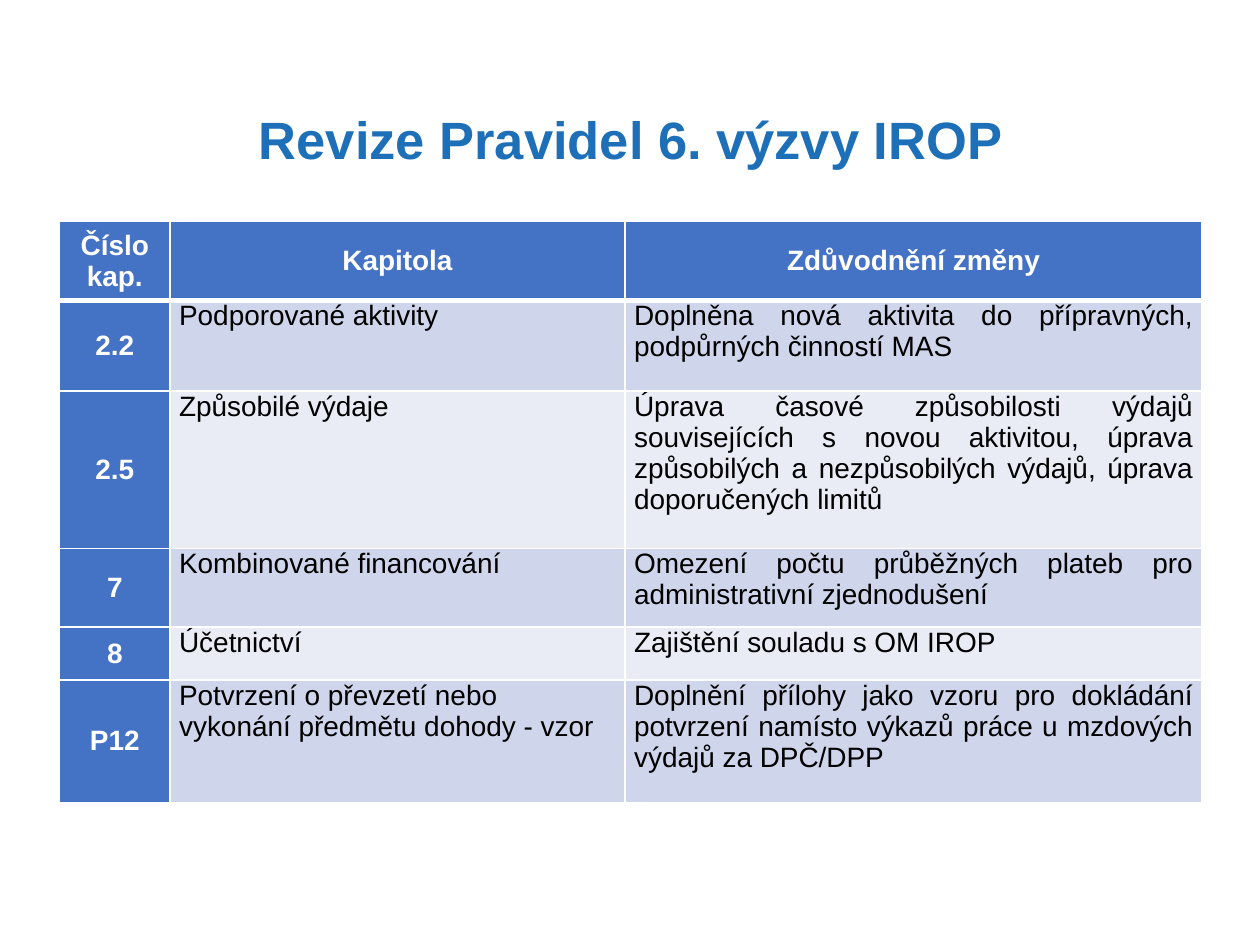
from pptx import Presentation
from pptx.dml.color import RGBColor
from pptx.enum.text import MSO_ANCHOR as Anchor, MSO_AUTO_SIZE as AutoSize, PP_ALIGN as Align
from pptx.oxml import parse_xml
from pptx.oxml.ns import nsdecls
from pptx.util import Pt

COLORS = {
    "title": "1D70B8",
    "header": "4472C4",
    "band_dark": "CFD5EA",
    "band_light": "E9EBF5",
    "white": "FFFFFF",
    "black": "000000",
}
COLUMN_WIDTHS = [63.2, 260, 329.8]
ROW_HEIGHTS = [45, 51.8, 90, 44.8, 30.2, 70.2]
ROWS = [
    ("Číslo kap.", "Kapitola", "Zdůvodnění změny"),
    ("2.2", "Podporované aktivity",
     "Doplněna nová aktivita do přípravných, podpůrných činností MAS"),
    ("2.5", "Způsobilé výdaje",
     "Úprava časové způsobilosti výdajů souvisejících s novou aktivitou, "
     "úprava způsobilých a nezpůsobilých výdajů, úprava doporučených limitů"),
    ("7", "Kombinované financování",
     "Omezení počtu průběžných plateb pro administrativní zjednodušení"),
    ("8", "Účetnictví", "Zajištění souladu s OM IROP"),
    ("P12", "Potvrzení o převzetí nebo vykonání předmětu dohody - vzor",
     "Doplnění přílohy jako vzoru pro dokládání potvrzení namísto výkazů práce "
     "u mzdových výdajů za DPČ/DPP"),
]


class SlideBuilder:
    """Holds the text style and the current slide."""

    font_name = "Arial"

    def __init__(self, slide):
        self.slide = slide

    def set_text(self, frame, text, size, color, bold, align):
        frame.text = text
        paragraph = frame.paragraphs[0]
        paragraph.alignment = align
        font = paragraph.font
        font.name, font.size, font.bold = self.font_name, Pt(size), bold
        font.color.rgb = RGBColor.from_string(COLORS[color])

    def title(self, text, left, top, width, height):
        shape = self.slide.shapes.title
        shape.left, shape.top, shape.width, shape.height = map(Pt, (left, top, width, height))
        frame = shape.text_frame
        frame.auto_size = AutoSize.NONE
        frame.vertical_anchor = Anchor.MIDDLE
        self.set_text(frame, text, 30, "title", True, Align.CENTER)

    def borders(self, cell, bottom_width):
        properties = cell._tc.get_or_add_tcPr()
        for side, width in zip("LRTB", (1, 1, 1, bottom_width)):
            properties.append(parse_xml(
                f'<a:ln{side} {nsdecls("a")} w="{Pt(width)}"><a:solidFill>'
                f'<a:srgbClr val="{COLORS["white"]}"/></a:solidFill></a:ln{side}>'))

    def cell(self, cell, text, row, column):
        is_header = row == 0 or column == 0
        band = "band_dark" if row % 2 else "band_light"
        self.borders(cell, 3 if row == 0 else 1)
        cell.fill.solid()
        cell.fill.fore_color.rgb = RGBColor.from_string(COLORS["header" if is_header else band])
        cell.margin_left = cell.margin_right = Pt(3.6 if column == 0 and row else 5.2)
        cell.margin_top = cell.margin_bottom = 0
        cell.vertical_anchor = Anchor.MIDDLE if is_header else Anchor.TOP
        body_align = Align.JUSTIFY if column == 2 else Align.LEFT
        self.set_text(cell.text_frame, text, 16, "white" if is_header else "black",
                      is_header, Align.CENTER if is_header else body_align)

    def table(self, rows, left, top, widths, heights):
        table = self.slide.shapes.add_table(
            len(rows), len(widths), Pt(left), Pt(top), Pt(sum(widths)), Pt(sum(heights))).table
        for column, width in zip(table.columns, widths):
            column.width = Pt(width)
        for row_index, (texts, height) in enumerate(zip(rows, heights)):
            table.rows[row_index].height = Pt(height)
            for column_index, text in enumerate(texts):
                self.cell(table.cell(row_index, column_index), text, row_index, column_index)


def main():
    presentation = Presentation()
    presentation.slide_width, presentation.slide_height = Pt(720), Pt(540)
    builder = SlideBuilder(presentation.slides.add_slide(presentation.slide_layouts[5]))
    builder.title("Revize Pravidel 6. výzvy IROP", 57, 57, 607, 44)
    builder.table(ROWS, 34, 126.7, COLUMN_WIDTHS, ROW_HEIGHTS)
    presentation.save("out.pptx")


if __name__ == "__main__":
    main()
